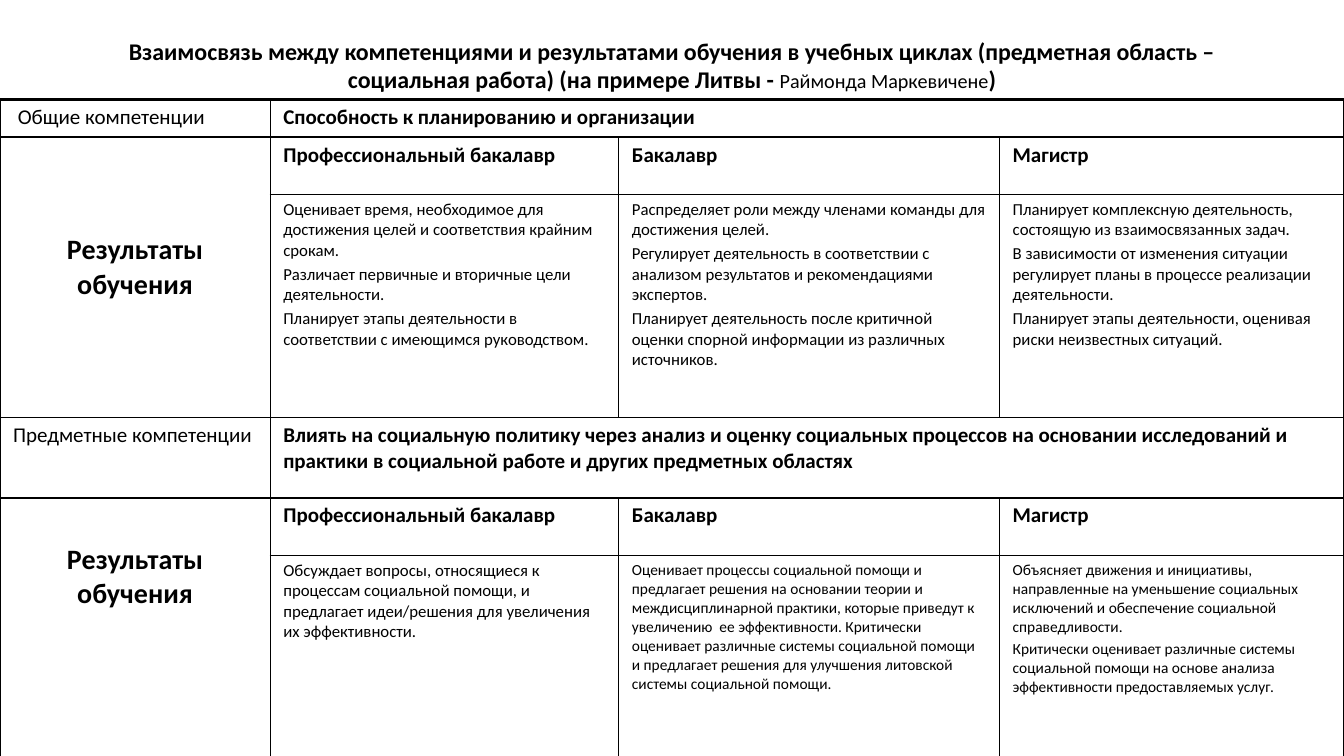
import pptx
import pptx.util
import pptx.dml.color
import pptx.enum.text
import pptx.oxml.ns
import lxml.etree

Pt = pptx.util.Pt
ALIGN = pptx.enum.text.PP_ALIGN
COLORS = {"ink": "000000", "paper": "FFFFFF"}
FONT = "Calibri"
WIDE, HIGH = 960, 540
COLS = [193, 249, 272, 246]
ROWS = [26.6, 41, 159.2, 57.6, 41, 151.2]
THIN, THICK = 1, 2.25


def tint(name):
    return pptx.dml.color.RGBColor.from_string(COLORS[name])


def write(para, text, size=12, bold=False, color="ink"):
    run = para.add_run()
    run.text = text
    font = run.font
    font.name, font.size, font.bold = FONT, Pt(size), bold
    font.color.rgb = tint(color)


class Slide:
    def __init__(self, deck):
        self.page = deck.slides.add_slide(deck.slide_layouts[5])

    def title(self, parts, left, top, width, height):
        """Fill the title with (text, size, bold) parts."""
        box = self.page.shapes.title
        box.left, box.top = Pt(left), Pt(top)
        box.width, box.height = Pt(width), Pt(height)
        frame = box.text_frame
        frame.word_wrap = True
        frame.auto_size = pptx.enum.text.MSO_AUTO_SIZE.NONE
        frame.vertical_anchor = pptx.enum.text.MSO_ANCHOR.MIDDLE
        para = frame.paragraphs[0]
        para.alignment = ALIGN.CENTER
        for text, size, bold in parts:
            write(para, text, size, bold)

    def table(self, left, top, cols, rows):
        frame = self.page.shapes.add_table(
            len(rows), len(cols), Pt(left), Pt(top), Pt(sum(cols)), Pt(sum(rows)))
        grid = frame.table
        grid.first_row = grid.horz_banding = False
        for col, width in zip(grid.columns, cols):
            col.width = Pt(width)
        for row, height in zip(grid.rows, rows):
            row.height = Pt(height)
        for r in range(len(rows)):
            for c in range(len(cols)):
                cell = grid.cell(r, c)
                cell.fill.solid()
                cell.fill.fore_color.rgb = tint("paper")
                edges = {"L": c == 0, "R": c == len(cols) - 1,
                         "T": r == 0, "B": r == len(rows) - 1}
                self.border(cell, edges)
        return grid

    def border(self, cell, edges):
        """Draw the four sides; a true value marks the thick outer edge."""
        props = cell._tc.get_or_add_tcPr()
        qn = pptx.oxml.ns.qn
        for spot, (side, outer) in enumerate(edges.items()):
            line = lxml.etree.Element(qn("a:ln" + side))
            line.set("w", str(Pt(THICK if outer else THIN)))
            fill = lxml.etree.SubElement(line, qn("a:solidFill"))
            lxml.etree.SubElement(fill, qn("a:srgbClr")).set("val", COLORS["ink"])
            props.insert(spot, line)

    def cell(self, cell, texts, size=12, bold=False, align=ALIGN.LEFT, top=3.6):
        cell.margin_left = cell.margin_right = Pt(9.4)
        cell.margin_top, cell.margin_bottom = Pt(top), Pt(3.6)
        frame = cell.text_frame
        for i, text in enumerate(texts):
            para = frame.add_paragraph() if i else frame.paragraphs[0]
            para.alignment = align
            para.space_before = Pt(size * 0.2)
            write(para, text, size, bold)


LEVELS = ["Профессиональный бакалавр", "Бакалавр", "Магистр"]

# Each block: label, skill, top margin of the side head, (size, paragraphs) by level
BLOCKS = [
    (" Общие компетенции", "Способность к планированию и организации", 68.6, [
        (12, ["Оценивает время, необходимое для достижения целей и соответствия крайним срокам.",
              "Различает первичные и вторичные цели деятельности.",
              "Планирует этапы деятельности в соответствии с имеющимся руководством."]),
        (12, ["Распределяет роли между членами команды для достижения целей.",
              "Регулирует деятельность в соответствии с анализом результатов и рекомендациями экспертов.",
              "Планирует деятельность после критичной оценки спорной информации из различных источников."]),
        (12, ["Планирует комплексную деятельность, состоящую из взаимосвязанных задач.",
              "В зависимости от изменения ситуации регулирует планы в процессе реализации деятельности.",
              "Планирует этапы деятельности, оценивая риски неизвестных ситуаций."]),
    ]),
    ("Предметные компетенции",
     "Влиять на социальную политику через анализ и оценку социальных процессов на основании "
     "исследований и практики в социальной работе и других предметных областях", 32, [
        (12, ["Обсуждает вопросы, относящиеся к процессам социальной помощи, и предлагает "
              "идеи/решения для увеличения их эффективности."]),
        (11, ["Оценивает процессы социальной помощи и предлагает решения на основании теории и "
              "междисциплинарной практики, которые приведут к увеличению  ее эффективности. "
              "Критически оценивает различные системы социальной помощи и предлагает решения "
              "для улучшения литовской системы социальной помощи."]),
        (11, ["Объясняет движения и инициативы, направленные на уменьшение социальных исключений "
              "и обеспечение социальной справедливости.",
              "Критически оценивает различные системы социальной помощи на основе анализа "
              "эффективности предоставляемых услуг."]),
    ]),
]


def main():
    deck = pptx.Presentation()
    deck.slide_width, deck.slide_height = Pt(WIDE), Pt(HIGH)
    slide = Slide(deck)
    slide.title([
        ("Взаимосвязь между компетенциями и результатами обучения в учебных циклах "
         "(предметная область – социальная работа) (на примере Литвы - ", 17.1, True),
        ("Раймонда Маркевичене", 14.4, False),
        (")", 17.1, True),
    ], 48, 21.6, 864, 49.7)
    grid = slide.table(0, 71.3, COLS, ROWS)
    for i, (label, skill, top, goals) in enumerate(BLOCKS):
        row = 3 * i
        grid.cell(row, 1).merge(grid.cell(row, 3))
        grid.cell(row + 1, 0).merge(grid.cell(row + 2, 0))
        slide.cell(grid.cell(row, 0), [label], 15)
        slide.cell(grid.cell(row, 1), [skill], 15, True)
        slide.cell(grid.cell(row + 1, 0), ["Результаты обучения"], 20, True, ALIGN.CENTER, top)
        for col, (level, (size, texts)) in enumerate(zip(LEVELS, goals), 1):
            slide.cell(grid.cell(row + 1, col), [level], 15, True)
            slide.cell(grid.cell(row + 2, col), texts, size)
    deck.save("out.pptx")


if __name__ == "__main__":
    main()
